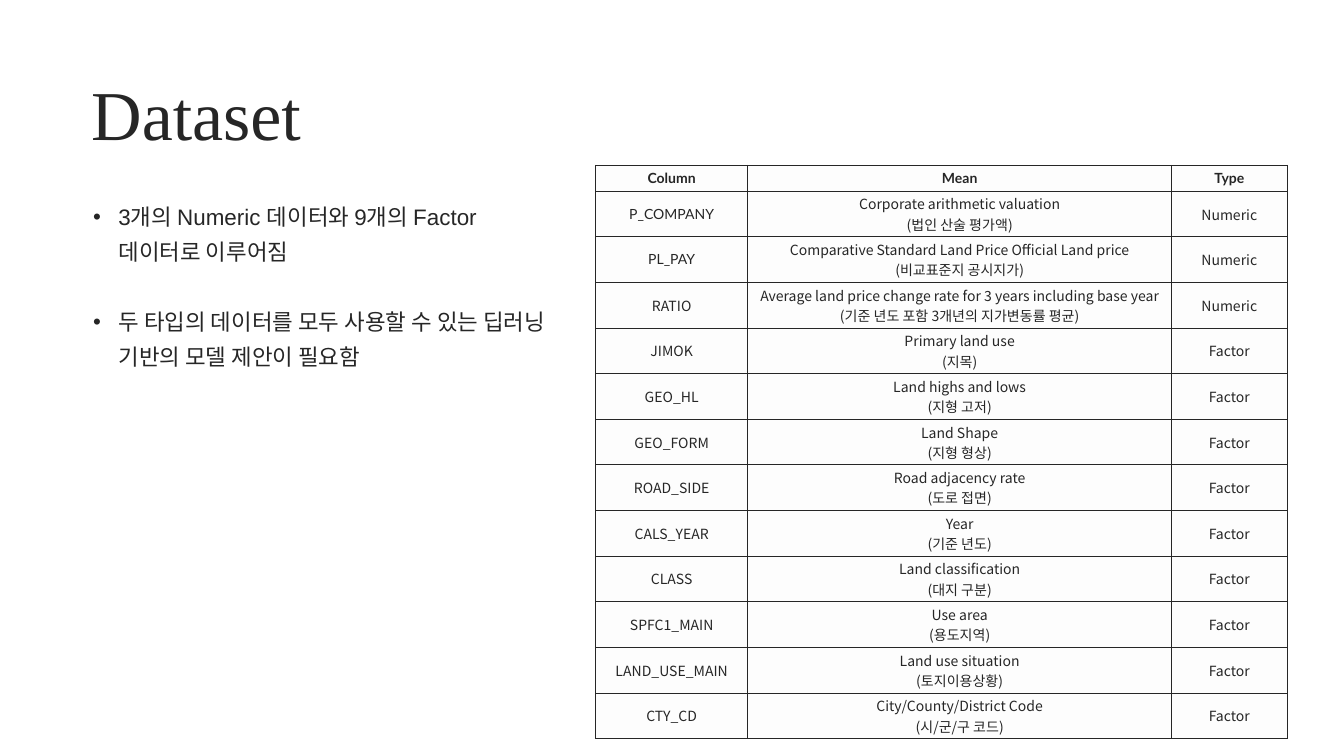
"""Build the Dataset slide: two remarks beside a table of the data columns."""
from lxml.etree import SubElement
from pptx import Presentation
from pptx.dml.color import RGBColor
from pptx.enum.text import MSO_ANCHOR as Anchor, PP_ALIGN as Align
from pptx.oxml.ns import qn
from pptx.util import Cm, Pt

INK, PAPER = "262626", "FDFDFD"
NOTO = "Noto Sans CJK KR"
ROWS = [
    ("Column", "Mean", "Type"),
    ("P_COMPANY", "Corporate arithmetic valuation\v(법인 산술 평가액)", "Numeric"),
    ("PL_PAY", "Comparative Standard Land Price Official Land price\v(비교표준지 공시지가)", "Numeric"),
    ("RATIO", "Average land price change rate for 3 years including base year\v"
              "(기준 년도 포함 3개년의 지가변동률 평균)", "Numeric"),
    ("JIMOK", "Primary land use\v(지목)", "Factor"),
    ("GEO_HL", "Land highs and lows\v(지형 고저)", "Factor"),
    ("GEO_FORM", "Land Shape\v(지형 형상)", "Factor"),
    ("ROAD_SIDE", "Road adjacency rate\n(도로 접면)", "Factor"),
    ("CALS_YEAR", "Year\n(기준 년도)", "Factor"),
    ("CLASS", "Land classification\v(대지 구분)", "Factor"),
    ("SPFC1_MAIN", "Use area\v(용도지역)", "Factor"),
    ("LAND_USE_MAIN", "Land use situation\v(토지이용상황)", "Factor"),
    ("CTY_CD", "City/County/District Code\v(시/군/구 코드)", "Factor"),
]
NOTES = [
    "3개의 Numeric 데이터와 9개의 Factor 데이터로 이루어짐",
    "두 타입의 데이터를 모두 사용할 수 있는 딥러닝 기반의 모델 제안이 필요함",
]


def paint(fill, color):
    fill.solid()
    fill.fore_color.rgb = RGBColor.from_string(color)


def style(para, size, face, bold=False):
    for run in para.runs:
        font = run.font
        font.size, font.name, font.bold = Pt(size), face, bold
        paint(font.fill, INK)
        SubElement(font._element, qn("a:ea"), typeface=NOTO)


deck = Presentation()
deck.slide_width, deck.slide_height = Cm(67.74), Cm(38.1)
slide = deck.slides.add_slide(deck.slide_layouts[6])

title = slide.shapes.add_textbox(Cm(4.45), Cm(3.05), Cm(22.68), Cm(5.28)).text_frame
title.word_wrap = True
title.vertical_anchor = Anchor.MIDDLE
title.margin_left = title.margin_right = Cm(0.15)
title.text = "Dataset"
style(title.paragraphs[0], 100, "Times New Roman")

table = slide.shapes.add_table(len(ROWS), 3, Cm(30.02), Cm(8.33), Cm(34.85), Cm(28.9)).table
for col, width in zip(table.columns, (7.67, 21.36, 5.82)):
    col.width = Cm(width)
for r, row in enumerate(ROWS):
    head = r == 0
    table.rows[r].height = Cm(1.3 if head else 2.3)
    for c, text in enumerate(row):
        cell = table.cell(r, c)
        cell.text_frame.text = text
        cell.vertical_anchor = Anchor.MIDDLE
        pad = Cm(0.03 if head else 0.13)
        cell.margin_left = cell.margin_right = cell.margin_top = pad
        cell.margin_bottom = 0 if head else pad
        face = "Lato" if head or (c == 0 and r < 3) else NOTO
        for para in cell.text_frame.paragraphs:
            para.alignment = Align.CENTER
            style(para, 20, face, head)
        props = cell._tc.get_or_add_tcPr()
        for side in ("lnL", "lnR", "lnT", "lnB"):
            line = SubElement(props, qn(f"a:{side}"), w=str(Pt(1)))
            SubElement(SubElement(line, qn("a:solidFill")), qn("a:srgbClr"), val=INK)
        paint(cell.fill, PAPER)

body = slide.shapes.add_textbox(Cm(4.45), Cm(9.7), Cm(23.44), Cm(8.97)).text_frame
body.word_wrap = True
body.text = "\n".join(NOTES)
for i, para in enumerate(body.paragraphs):
    para.line_spacing = Pt(50)
    para.space_before = Pt(50 * i)
    style(para, 32, "Arial")
    props = para._p.get_or_add_pPr()
    props.set("marL", str(Cm(1.27)))
    props.set("indent", str(-Cm(1.27)))
    SubElement(props, qn("a:buFont"), typeface="Arial")
    SubElement(props, qn("a:buChar"), char="•")

deck.save("out.pptx")
